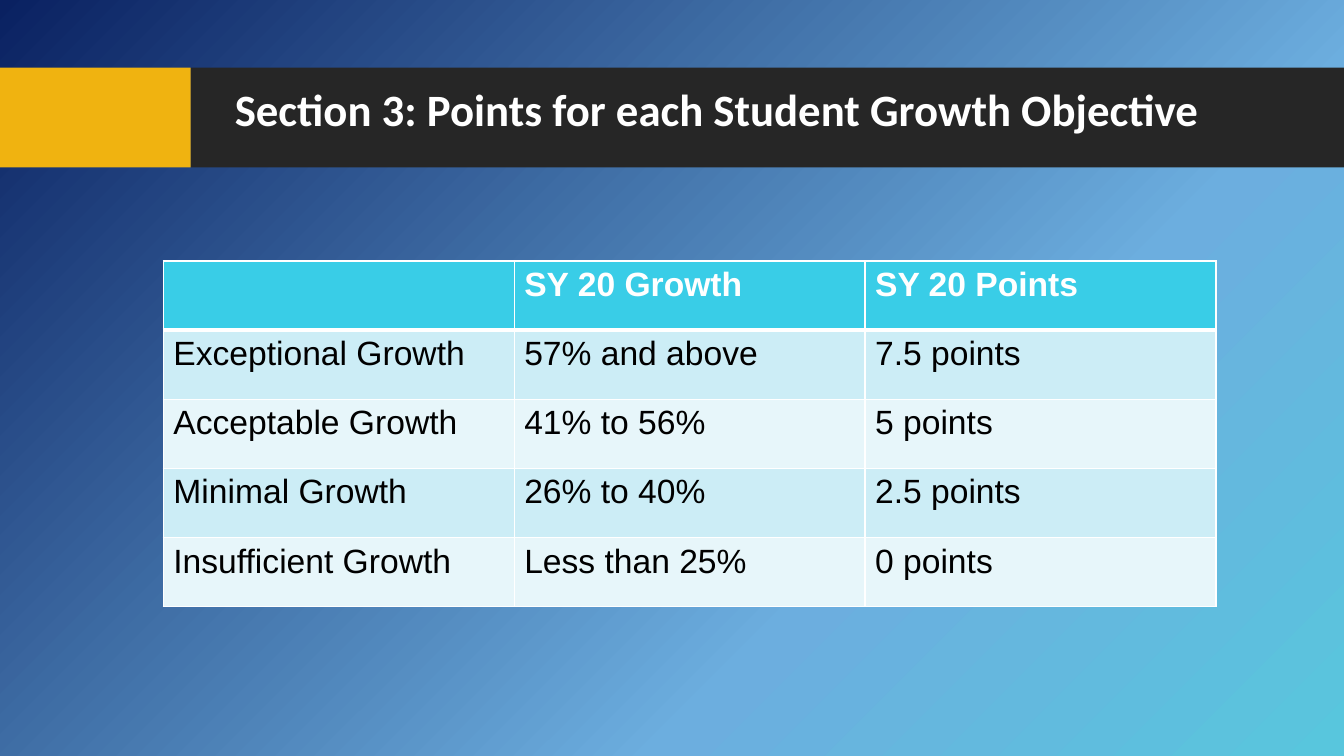
import pptx
import pptx.dml.color
import pptx.enum.shapes
import pptx.enum.text
import pptx.oxml
import pptx.oxml.ns
import pptx.util

RGBColor = pptx.dml.color.RGBColor
Inches = pptx.util.Inches
qn = pptx.oxml.ns.qn

TITLE = "Section 3: Points for each Student Growth Objective"
ROWS = [
    ("", "SY 20 Growth", "SY 20 Points"),
    ("Exceptional Growth", "57% and above", "7.5 points"),
    ("Acceptable Growth", "41% to 56%", "5 points"),
    ("Minimal Growth", "26% to 40%", "2.5 points"),
    ("Insufficient Growth", "Less than 25%", "0 points"),
]

WHITE = RGBColor(0xFF, 0xFF, 0xFF)
BLACK = RGBColor(0x00, 0x00, 0x00)
CHARCOAL = RGBColor(0x26, 0x26, 0x26)
GOLD = RGBColor(0xF0, 0xB3, 0x10)
HEADER = RGBColor(0x39, 0xCD, 0xE7)
BANDS = (RGBColor(0xE7, 0xF6, 0xFA), RGBColor(0xCC, 0xED, 0xF6))
BACKDROP = [
    (0, RGBColor(0x58, 0xC6, 0xDD)),
    (33, RGBColor(0x6C, 0xAE, 0xDF)),
    (100, RGBColor(0x0A, 0x21, 0x61)),
]

WIDTH, HEIGHT = 13.33, 7.5
BAND_TOP, BAND_HEIGHT, BAND_SPLIT = 0.67, 0.99, 1.89
TABLE_LEFT, TABLE_TOP = 1.62, 2.59
COLUMN_WIDTH, ROW_HEIGHT = 3.48, 0.686


def paint_backdrop(page):
    fill = page.background.fill
    fill.gradient()
    fill.gradient_angle = 135
    stops = page.element.find(".//" + qn("a:gsLst"))
    for stop in list(stops):
        stops.remove(stop)
    for share, color in BACKDROP:
        stops.append(pptx.oxml.parse_xml(
            f'<a:gs {pptx.oxml.ns.nsdecls("a")} pos="{share * 1000}">'
            f'<a:srgbClr val="{color}"/></a:gs>'))


def add_band(page, left, right, color):
    band = page.shapes.add_shape(
        pptx.enum.shapes.MSO_SHAPE.RECTANGLE, Inches(left), Inches(BAND_TOP),
        Inches(right - left), Inches(BAND_HEIGHT))
    band.shadow.inherit = False
    band.fill.solid()
    band.fill.fore_color.rgb = color
    band.line.fill.background()


def add_span(para, text, font, size, color, bold):
    span = para.add_run()
    span.text = text
    span.font.name = font
    span.font.size = pptx.util.Pt(size)
    span.font.color.rgb = color
    span.font.bold = bold


def add_title(page):
    box = page.shapes.add_textbox(
        Inches(2.23), Inches(0.82), Inches(10.98), Inches(0.69))
    box.text_frame.word_wrap = True
    box.text_frame.vertical_anchor = pptx.enum.text.MSO_ANCHOR.TOP
    para = box.text_frame.paragraphs[0]
    para.line_spacing = 0.9
    add_span(para, TITLE, "Calibri", 32, WHITE, True)


def set_borders(cell, bottom_width):
    properties = cell._tc.get_or_add_tcPr()
    widths = {"lnL": 1, "lnR": 1, "lnT": 1, "lnB": bottom_width}
    for place, (side, width) in enumerate(widths.items()):
        properties.insert(place, pptx.oxml.parse_xml(
            f'<a:{side} {pptx.oxml.ns.nsdecls("a")} w="{pptx.util.Pt(width)}">'
            f'<a:solidFill><a:srgbClr val="{WHITE}"/></a:solidFill></a:{side}>'))


def add_growth_table(page):
    count = len(ROWS[0])
    table = page.shapes.add_table(
        len(ROWS), count, Inches(TABLE_LEFT), Inches(TABLE_TOP),
        Inches(COLUMN_WIDTH * count), Inches(ROW_HEIGHT * len(ROWS))).table
    for column in table.columns:
        column.width = Inches(COLUMN_WIDTH)
    for index, texts in enumerate(ROWS):
        is_header = index == 0
        table.rows[index].height = Inches(ROW_HEIGHT)
        for position, text in enumerate(texts):
            cell = table.cell(index, position)
            cell.fill.solid()
            cell.fill.fore_color.rgb = HEADER if is_header else BANDS[index % 2]
            set_borders(cell, 3 if is_header else 1)
            if text:
                add_span(cell.text_frame.paragraphs[0], text, "Arial", 24,
                         WHITE if is_header else BLACK, is_header)


def main():
    """Build the slide on points for each student growth objective."""
    deck = pptx.Presentation()
    deck.slide_width, deck.slide_height = Inches(WIDTH), Inches(HEIGHT)
    page = deck.slides.add_slide(deck.slide_layouts[6])
    paint_backdrop(page)
    add_band(page, BAND_SPLIT, WIDTH, CHARCOAL)
    add_band(page, 0, BAND_SPLIT, GOLD)
    add_title(page)
    add_growth_table(page)
    deck.save("out.pptx")


if __name__ == "__main__":
    main()
